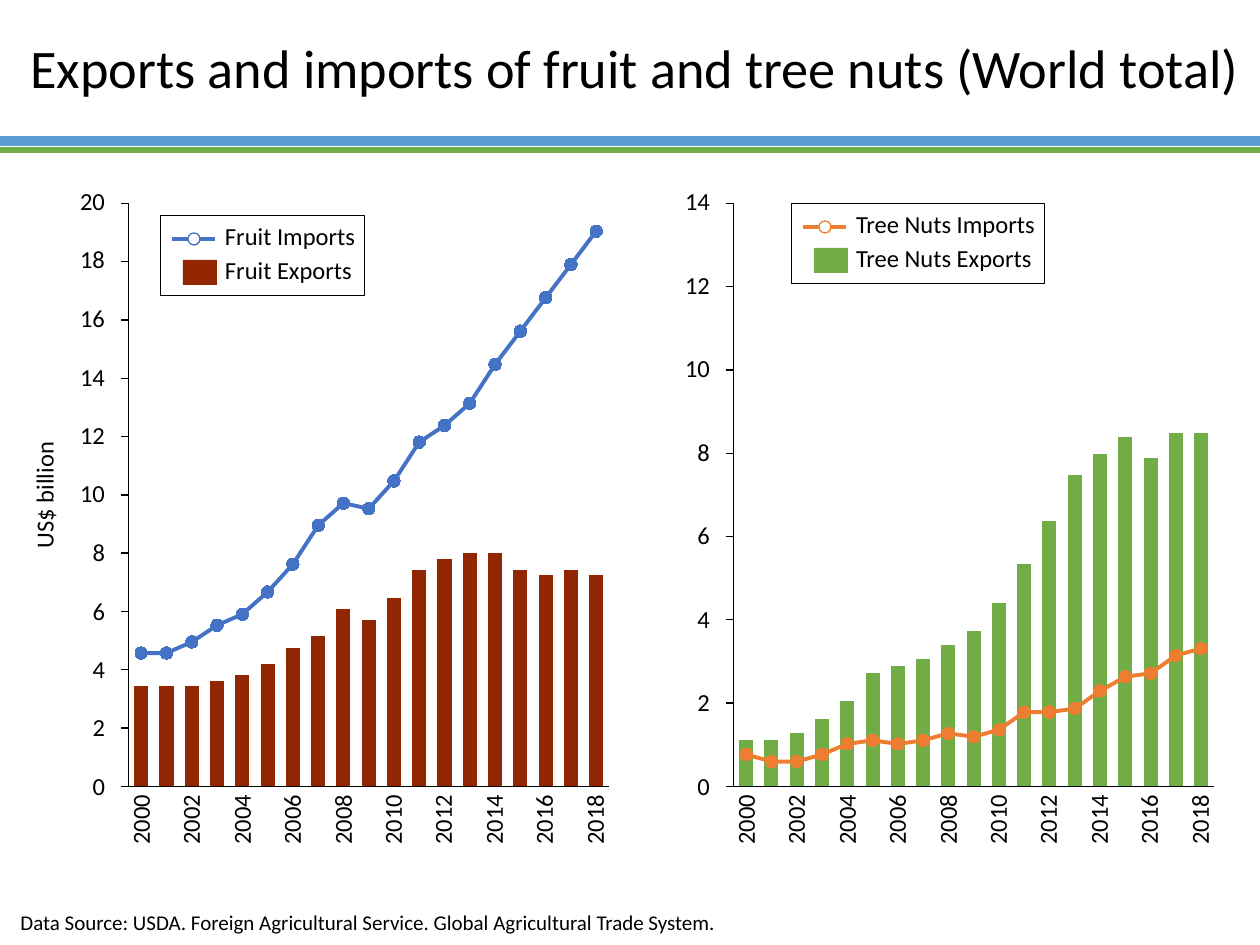
from dataclasses import dataclass

from lxml.etree import SubElement
from pptx import Presentation
from pptx.chart.data import CategoryChartData
from pptx.dml.color import RGBColor
from pptx.enum.chart import XL_CHART_TYPE as CT, XL_MARKER_STYLE as MARKER
from pptx.enum.chart import XL_TICK_LABEL_POSITION as LABELS, XL_TICK_MARK as TICK
from pptx.enum.shapes import MSO_CONNECTOR, MSO_SHAPE as SHAPE
from pptx.enum.text import MSO_ANCHOR as ANCHOR, PP_ALIGN as ALIGN
from pptx.oxml import parse_xml
from pptx.oxml.ns import nsdecls, qn
from pptx.util import Pt

PX = 914400 // 126
YEARS = range(2000, 2019)
PANEL_STEP = 605
LABEL_H = 26


@dataclass(frozen=True)
class Theme:
    font: str = "Calibri"
    text: str = "000000"
    white: str = "FFFFFF"
    rule_blue: str = "5B9BD5"
    green: str = "70AD47"
    brown: str = "932602"
    blue: str = "4472C4"
    orange: str = "ED7D31"
    title_size: int = 31
    label_size: int = 14
    source_size: int = 12


THEME = Theme()


@dataclass(frozen=True)
class Panel:
    name: str
    bar_color: str
    line_color: str
    exports: tuple
    imports: tuple
    top_label: int  # highest label, in US$ billion
    axis_max: int  # same height, in chart units
    legend_box: tuple


PANELS = (
    Panel("Fruit", THEME.brown, THEME.blue,
          (18, 18, 18, 19, 20, 22, 25, 27, 32, 30, 34, 39, 41, 42, 42, 39, 38, 39, 38),
          (24, 24, 26, 29, 31, 35, 40, 47, 51, 50, 55, 62, 65, 69, 76, 82, 88, 94, 100),
          20, 105, (160, 215, 204, 80)),
    Panel("Tree Nuts", THEME.green, THEME.orange,
          (13, 13, 15, 19, 24, 32, 34, 36, 40, 44, 52, 63, 75, 88, 94, 99, 93, 100, 100),
          (9, 7, 7, 9, 12, 13, 12, 13, 15, 14, 16, 21, 21, 22, 27, 31, 32, 37, 39),
          14, 165, (791, 203, 253, 80)),
)


def rgb(color):
    return RGBColor.from_string(color)


def px(*lengths):
    return [round(n) * PX for n in lengths]


def style_fill(fill, color):
    if color:
        fill.solid()
        fill.fore_color.rgb = rgb(color)
    else:
        fill.background()


def style_line(line, color, width=0.75):
    style_fill(line.fill, color)
    if color:
        line.width = Pt(width)


def add_text(slide, text, box, size=THEME.label_size, align=ALIGN.LEFT,
             anchor=ANCHOR.MIDDLE, vertical=False, tight=True, spacing=0.9):
    """A tight box has no insets and does not wrap."""
    sp = slide.shapes.add_textbox(*px(*box))
    tf = sp.text_frame
    tf.word_wrap = not tight
    tf.vertical_anchor = anchor
    if tight:
        tf.margin_left = tf.margin_top = tf.margin_right = tf.margin_bottom = 0
    if vertical:
        sp.element.txBody.bodyPr.set("vert", "vert270")
    p = tf.paragraphs[0]
    p.text = text
    p.alignment = align
    p.line_spacing = spacing
    font = p.runs[0].font
    font.name, font.size = THEME.font, Pt(size)
    font.color.rgb = rgb(THEME.text)


def add_line(slide, x1, x2, y, color, width):
    line = slide.shapes.add_connector(MSO_CONNECTOR.STRAIGHT, *px(x1, y, x2, y))
    style_line(line.line, color, width)
    SubElement(line.element.spPr, qn("a:effectLst"))


def add_shape(slide, kind, box, fill=None, line=None, width=0.75):
    sp = slide.shapes.add_shape(kind, *px(*box))
    sp.shadow.inherit = False
    style_fill(sp.fill, fill)
    style_line(sp.line, line, width)


def move_last_series_to_line(chart):
    """Turn the last bar series into a line on the same axes."""
    bars = chart.plots[0]._element
    ser = bars.findall(qn("c:ser"))[-1]
    invert = ser.find(qn("c:invertIfNegative"))
    if invert is not None:
        ser.remove(invert)
    lines = parse_xml(f'<c:lineChart {nsdecls("c")}><c:grouping val="standard"/>'
                      '<c:varyColors val="0"/></c:lineChart>')
    lines.append(ser)
    SubElement(lines, qn("c:marker")).set("val", "1")
    for axis in bars.findall(qn("c:axId")):
        SubElement(lines, qn("c:axId")).set("val", axis.get("val"))
    bars.addnext(lines)


def set_plot_layout(chart, x, y, w, h):
    area = chart.plots[0]._element.getparent()
    old = area.find(qn("c:layout"))
    if old is not None:
        area.remove(old)
    parts = [("layoutTarget", "inner"), ("xMode", "edge"), ("yMode", "edge"),
             ("x", x), ("y", y), ("w", w), ("h", h)]
    body = "".join(f'<c:{tag} val="{val}"/>' for tag, val in parts)
    area.insert(0, parse_xml(f'<c:layout {nsdecls("c")}><c:manualLayout>{body}'
                             '</c:manualLayout></c:layout>'))


def add_panel_chart(slide, panel, dx):
    data = CategoryChartData()
    data.categories = [str(year) for year in YEARS]
    data.add_series(f"{panel.name} Exports", panel.exports)
    data.add_series(f"{panel.name} Imports", panel.imports)
    chart = slide.shapes.add_chart(CT.COLUMN_STACKED, *px(117 + dx, 192, 503, 606), data).chart
    chart.has_legend = chart.has_title = False
    chart.font.name, chart.font.size = THEME.font, Pt(10)
    chart.font.color.rgb = rgb(THEME.text)
    for axis in (chart.category_axis, chart.value_axis):
        axis.has_major_gridlines = False
        axis.tick_label_position = LABELS.NONE
        axis.major_tick_mark = axis.minor_tick_mark = TICK.NONE
        style_line(axis.format.line, THEME.text)
    axis = chart.value_axis
    axis.major_tick_mark = TICK.OUTSIDE
    axis.minimum_scale, axis.maximum_scale = 0, panel.axis_max
    axis.major_unit = panel.axis_max / (panel.top_label // 2)
    move_last_series_to_line(chart)
    set_plot_layout(chart, 0.023, 0.019, 0.955, 0.962)
    bars, lines = chart.plots
    bars.gap_width, bars.overlap = 80, 100
    bars.vary_by_categories = False
    style_fill(bars.series[0].format.fill, panel.bar_color)
    imports = lines.series[0]
    imports.smooth = False
    style_line(imports.format.line, panel.line_color, 2.25)
    imports.marker.style, imports.marker.size = MARKER.CIRCLE, 7
    style_fill(imports.marker.format.fill, panel.line_color)
    style_line(imports.marker.format.line, panel.line_color)


def add_axis_labels(slide, panel, dx):
    top, bottom = 190, 775
    for value in range(0, panel.top_label + 1, 2):
        width = 13 * len(str(value))
        y = bottom - (bottom - top) * value / panel.top_label
        add_text(slide, str(value), (105 + dx - width, y, width, LABEL_H), align=ALIGN.RIGHT)
    for i, year in enumerate(YEARS[::2]):
        add_text(slide, str(year), (129 + dx + 50.4 * i, 795, LABEL_H, 50),
                 align=ALIGN.RIGHT, vertical=True)


def add_legend(slide, panel):
    x, y, width, _ = panel.legend_box
    text_x = 65
    add_shape(slide, SHAPE.RECTANGLE, panel.legend_box, line=THEME.text, width=0.25)
    add_line(slide, x + 12, x + 55, y + 24, panel.line_color, 2.25)
    add_shape(slide, SHAPE.RECTANGLE, (x + 23, y + 45, 34, 25), fill=panel.bar_color)
    add_shape(slide, SHAPE.OVAL, (x + 28, y + 18, 12, 12), THEME.white, panel.line_color)
    for i, flow in enumerate(("Imports", "Exports")):
        add_text(slide, f"{panel.name} {flow}",
                 (x + text_x, y + 10 + 34 * i, width - text_x - 3, LABEL_H))


def main():
    prs = Presentation()
    prs.slide_width, prs.slide_height = px(1260, 945)
    slide = prs.slides.add_slide(prs.slide_layouts[6])
    add_line(slide, -1, 1262, 141, THEME.rule_blue, 6)
    add_line(slide, -1, 1262, 150, THEME.green, 3)
    add_text(slide, "Exports and imports of fruit and tree nuts (World total)",
             (18, 13, 1242, 116), THEME.title_size, tight=False)
    for i, panel in enumerate(PANELS):
        add_panel_chart(slide, panel, PANEL_STEP * i)
        add_axis_labels(slide, panel, PANEL_STEP * i)
        add_legend(slide, panel)
    add_text(slide, "US$ billion", (33, 442, LABEL_H, 106), align=ALIGN.CENTER,
             anchor=ANCHOR.BOTTOM, vertical=True)
    add_text(slide, "Data Source: USDA. Foreign Agricultural Service. "
             "Global Agricultural Trade System.", (8, 903, 1230, 38),
             THEME.source_size, anchor=ANCHOR.TOP, tight=False, spacing=1.0)
    prs.save("out.pptx")


if __name__ == "__main__":
    main()
